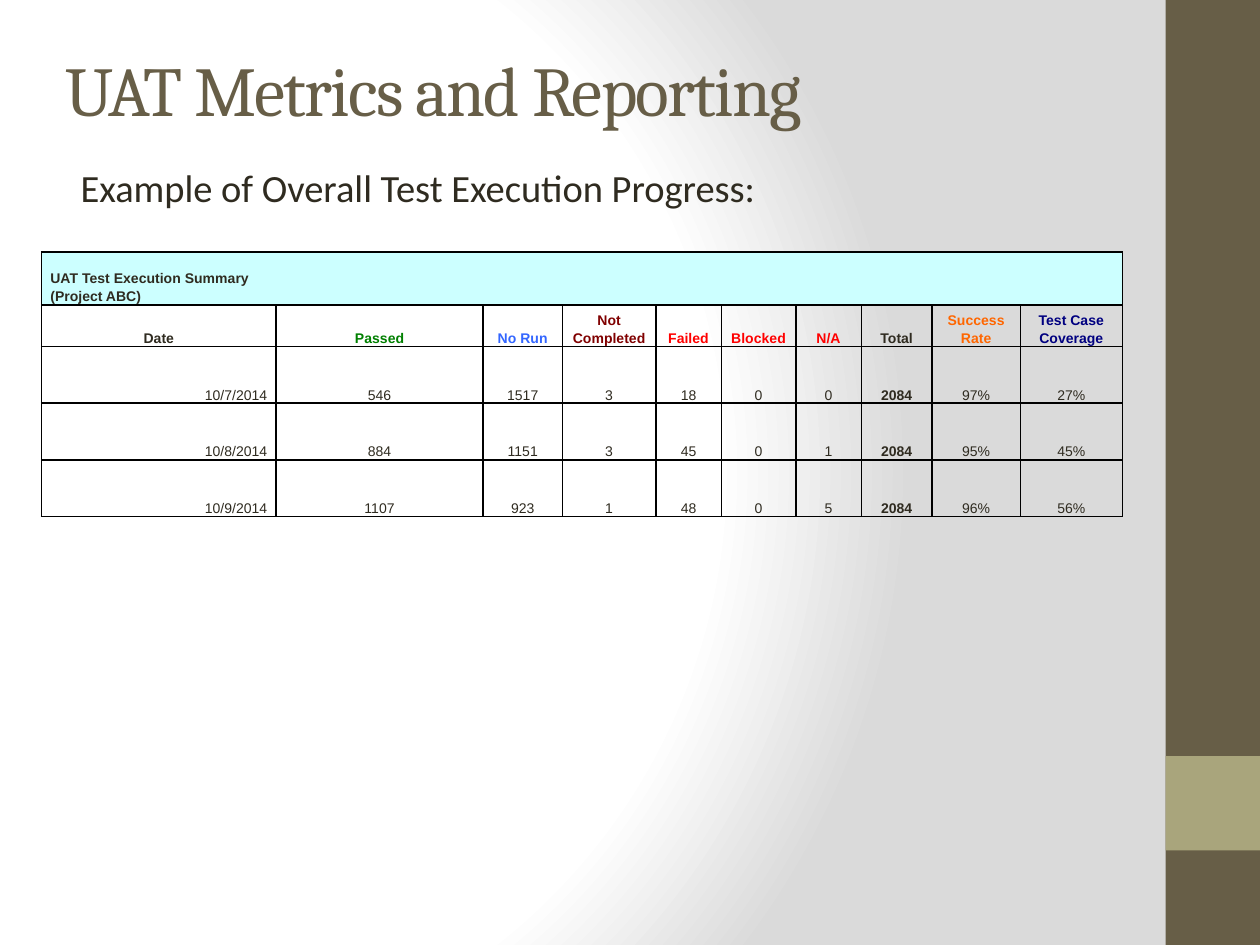
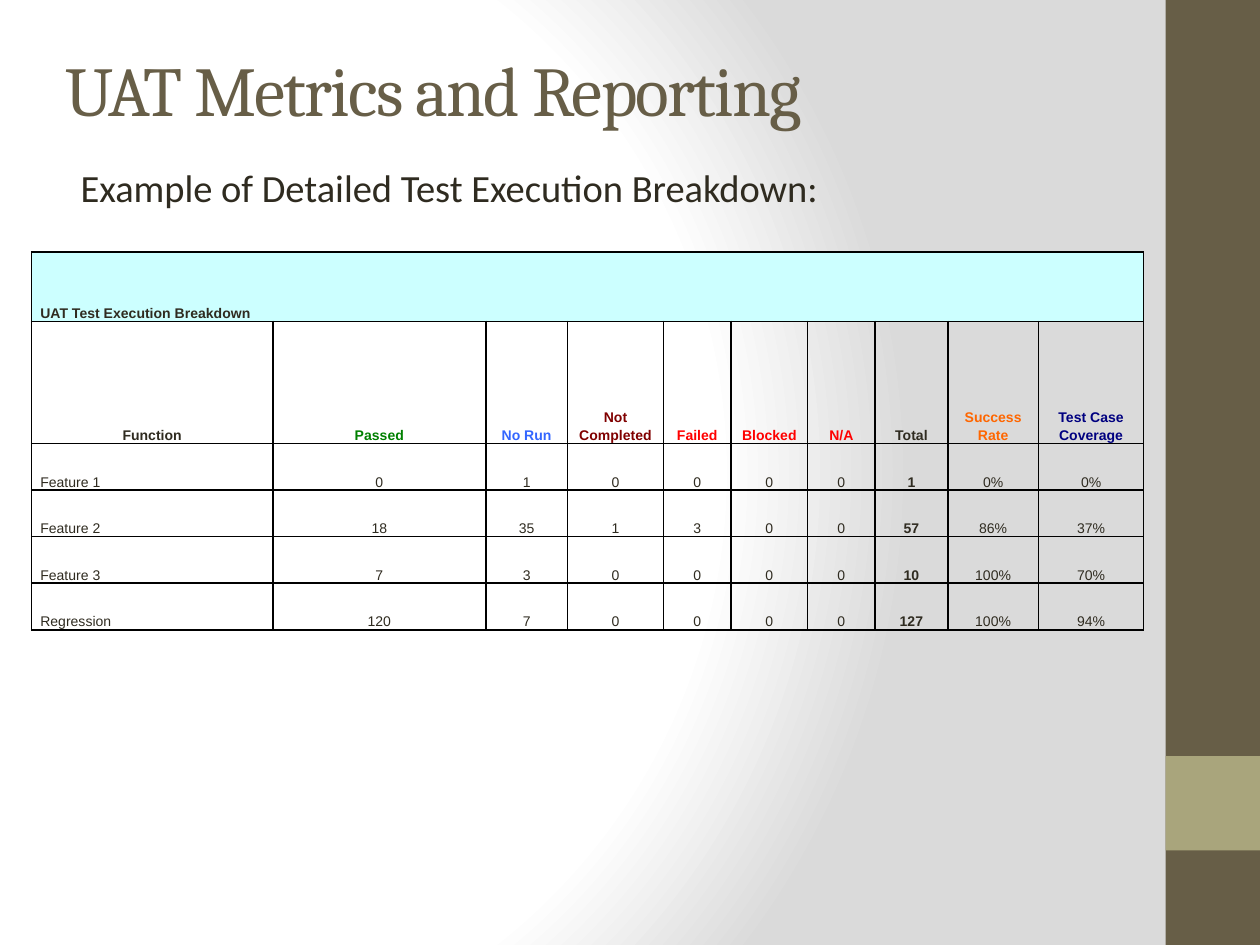
"""Build two slides that report user acceptance test metrics."""
from dataclasses import dataclass

from pptx import Presentation
from pptx.dml.color import RGBColor
from pptx.enum.shapes import MSO_SHAPE
from pptx.enum.text import MSO_ANCHOR, PP_ALIGN
from pptx.oxml import parse_xml
from pptx.oxml.ns import nsdecls
from pptx.util import Inches, Pt

RECT = MSO_SHAPE.RECTANGLE
TOP, MIDDLE, BOTTOM = MSO_ANCHOR.TOP, MSO_ANCHOR.MIDDLE, MSO_ANCHOR.BOTTOM
LEFT, CENTER, RIGHT = PP_ALIGN.LEFT, PP_ALIGN.CENTER, PP_ALIGN.RIGHT

WIDE, HIGH = Inches(10), Inches(7.5)
COL, ROW = WIDE / 40, HIGH / 30

COLORS = {
    "white": "FFFFFF", "mist": "DADADA", "brown": "675E47", "olive": "A9A57C",
    "ink": "2F2B20", "aqua": "CCFFFF", "line": "000000", "green": "008000",
    "blue": "3366FF", "maroon": "800000", "red": "FF0000", "orange": "FF6600",
    "navy": "000080",
}


@dataclass(frozen=True)
class Box:
    """A place on the grid, in columns and rows."""
    x: float
    y: float
    w: float
    h: float

    def place(self) -> tuple[int, int, int, int]:
        """Give left, top, width and height as lengths."""
        return (round(self.x * COL), round(self.y * ROW),
                round(self.w * COL), round(self.h * ROW))


@dataclass(frozen=True)
class Font:
    """The look of a run of text."""
    name: str
    size: float
    color: str = "ink"
    bold: bool = False
    track: int = 0


@dataclass(frozen=True)
class Band:
    """A filled block of the side bar."""
    box: Box
    color: str


@dataclass(frozen=True)
class Label:
    """A text box with its look."""
    box: Box
    font: Font
    anchor: MSO_ANCHOR
    inset: float
    space: float = 0


@dataclass(frozen=True)
class Head:
    """A table column: its heading, colour and relative width."""
    text: str
    color: str
    width: float


@dataclass(frozen=True)
class Report:
    """One slide: its lead line and its table."""
    lead: str
    name: str
    key: str
    side: PP_ALIGN
    merge: int
    x: float
    width: float
    rows: tuple[float, float, float]
    data: list[str]


BANDS = [Band(Box(37, 0, 3, 30), "brown"), Band(Box(37, 24, 3, 3), "olive")]
TITLE = Label(Box(1.68, 0.32, 34.68, 5), Font("Cambria", 40, "brown", track=-100),
              MIDDLE, 0.1)
LEAD = Label(Box(1.68, 5, 32.32, 24), Font("Calibri", 22), TOP, 0.22, 4.4)

HEADS = [
    Head("", "ink", 1.86), Head("Passed", "green", 1.64),
    Head("No Run", "blue", 0.63), Head("Not Completed", "maroon", 0.74),
    Head("Failed", "red", 0.52), Head("Blocked", "red", 0.59),
    Head("N/A", "red", 0.52), Head("Total", "ink", 0.56),
    Head("Success Rate", "orange", 0.7), Head("Test Case Coverage", "navy", 0.81),
]
LAST = len(HEADS) - 1

REPORTS = [
    Report("Example of Overall Test Execution Progress:",
           "UAT Test Execution Summary\n(Project ABC)", "Date", RIGHT, 1,
           1.32, 34.32, (1.68, 1.32, 1.8),
           ["10/7/2014|546|1517|3|18|0|0|2084|97%|27%",
            "10/8/2014|884|1151|3|45|0|1|2084|95%|45%",
            "10/9/2014|1107|923|1|48|0|5|2084|96%|56%"]),
    Report("Example of Detailed Test Execution Breakdown:",
           "UAT Test Execution Breakdown", "Function", LEFT, 0,
           1, 35.32, (2.2, 3.88, 1.48),
           ["Feature 1|0|1|0|0|0|0|1|0%|0%",
            "Feature 2|18|35|1|3|0|0|57|86%|37%",
            "Feature 3|7|3|0|0|0|0|10|100%|70%",
            "Regression|120|7|0|0|0|0|127|100%|94%"]),
]


def tint(name: str) -> RGBColor:
    """Look up a colour by name."""
    return RGBColor.from_string(COLORS[name])


def style(para, font: Font) -> None:
    """Format every run of a paragraph."""
    for run in para.runs:
        run.font.name, run.font.size = font.name, Pt(font.size)
        run.font.bold = font.bold
        run.font.color.rgb = tint(font.color)
        if font.track:
            run.font._element.set("spc", str(font.track))


def add_back(slide) -> None:
    """Fill the slide with a round fade from white to grey."""
    stops = "".join(
        f'<a:gs pos="{pos}000"><a:srgbClr val="{COLORS[name]}"/></a:gs>'
        for pos, name in ((0, "white"), (75, "white"), (100, "mist")))
    slide.element.cSld.insert(0, parse_xml(
        f'<p:bg {nsdecls("p", "a")}><p:bgPr><a:gradFill rotWithShape="1">'
        f'<a:gsLst>{stops}</a:gsLst><a:path path="circle">'
        '<a:fillToRect l="20000" t="50000" r="100000" b="50000"/></a:path>'
        '</a:gradFill><a:effectLst/></p:bgPr></p:bg>'))


def add_band(slide, band: Band) -> None:
    """Draw one block of the side bar."""
    shape = slide.shapes.add_shape(RECT, *band.box.place())
    shape.shadow.inherit = False
    shape.fill.solid()
    shape.fill.fore_color.rgb = tint(band.color)
    shape.line.fill.background()


def add_label(slide, label: Label, text: str) -> None:
    """Write a line of text in its box."""
    frame = slide.shapes.add_textbox(*label.box.place()).text_frame
    frame.word_wrap = True
    frame.vertical_anchor = label.anchor
    frame.margin_left = Inches(label.inset)
    frame.text = text
    para = frame.paragraphs[0]
    para.space_before = Pt(label.space)
    style(para, label.font)


def set_edges(cell, shown: str) -> None:
    """Rule the sides named in shown and clear the others."""
    props = cell._tc.get_or_add_tcPr()
    solid = f'<a:solidFill><a:srgbClr val="{COLORS["line"]}"/></a:solidFill>'
    for spot, side in enumerate("LRTB"):
        fill = solid if side in shown else "<a:noFill/>"
        props.insert(spot, parse_xml(
            f'<a:ln{side} {nsdecls("a")} w="{Pt(1)}">{fill}</a:ln{side}>'))


def fill_cell(cell, text: str, side: PP_ALIGN, color: str = "ink",
              bold: bool = False) -> None:
    """Write and align the text of a cell."""
    cell.vertical_anchor = BOTTOM
    cell.margin_left = cell.margin_right = Inches(0.07)
    cell.margin_top = cell.margin_bottom = 0
    cell.text_frame.text = text
    for para in cell.text_frame.paragraphs:
        para.alignment, para.line_spacing = side, 1.15
        style(para, Font("Arial", 8, color, bold))


def add_grid(slide, report: Report) -> None:
    """Draw the table of a report."""
    top, head, body = report.rows
    highs = [top, head] + [body] * len(report.data)
    box = Box(report.x, 8, report.width, sum(highs))
    grid = slide.shapes.add_table(len(highs), len(HEADS), *box.place()).table
    grid.first_row = grid.horz_banding = False
    for row, high in zip(grid.rows, highs):
        row.height = round(high * ROW)
    share = report.width * COL / sum(item.width for item in HEADS)
    for col, item in enumerate(HEADS):
        grid.columns[col].width = round(item.width * share)
        cell = grid.cell(0, col)
        fill_cell(cell, "" if col else report.name, LEFT, bold=True)
        cell.fill.solid()
        cell.fill.fore_color.rgb = tint("aqua")
        set_edges(cell, "TB" + "L" * (col == 0) + "R" * (col == LAST))
        fill_cell(grid.cell(1, col), item.text or report.key, CENTER,
                  item.color, True)
        for row, line in enumerate(report.data, 2):
            fill_cell(grid.cell(row, col), line.split("|")[col],
                      CENTER if col else report.side, bold=item.text == "Total")
        for row in range(1, len(highs)):
            grid.cell(row, col).fill.background()
            set_edges(grid.cell(row, col), "LRTB")
    if report.merge:
        grid.cell(0, 0).merge(grid.cell(0, report.merge))


def main() -> None:
    """Build and save the slides."""
    deck = Presentation()
    deck.slide_width, deck.slide_height = WIDE, HIGH
    for report in REPORTS:
        slide = deck.slides.add_slide(deck.slide_layouts[6])
        add_back(slide)
        for band in BANDS:
            add_band(slide, band)
        add_label(slide, TITLE, "UAT Metrics and Reporting")
        add_label(slide, LEAD, report.lead)
        add_grid(slide, report)
    deck.save("out.pptx")


if __name__ == "__main__":
    main()
